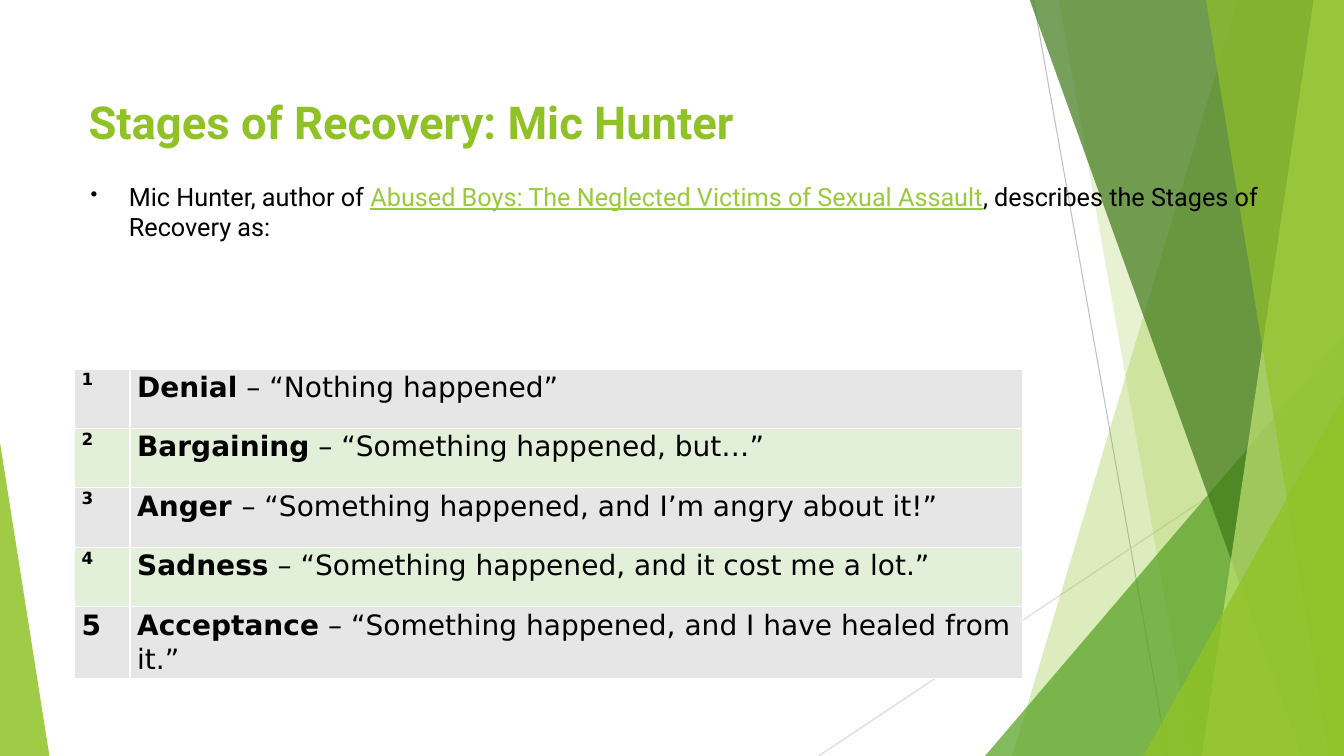
from lxml import etree
from pptx import Presentation
from pptx.dml.color import RGBColor
from pptx.enum import shapes, text
from pptx.oxml import ns
from pptx.util import Inches, Pt

COLORS = {
    "lime": "90C226", "green": "54A021", "forest": "3F7819", "pale": "C0E474",
    "link": "99CA3C", "black": "000000", "line": "BFBFBF", "light_line": "D9D9D9",
    "gray_row": "E7E6E6", "green_row": "E2EFD9",
}
WIDTH, HEIGHT = 13.33, 7.5
TOP = -0.01

STAGES = [
    ("Denial", " – “Nothing happened”"),
    ("Bargaining", " – “Something happened, but…”"),
    ("Anger ", "– “Something happened, and I’m angry about it!”"),
    ("Sadness", " – “Something happened, and it cost me a lot.”"),
    ("Acceptance", " – “Something happened, and I have healed from it.”"),
]


def color(name):
    return RGBColor.from_string(COLORS[name])


def paint(shape, fill, opacity):
    shape.shadow.inherit = False
    shape.line.fill.background()
    shape.fill.solid()
    shape.fill.fore_color.rgb = color(fill)
    value = shape.fill._xPr.find(".//" + ns.qn("a:srgbClr"))
    etree.SubElement(value, ns.qn("a:alpha"), val=str(opacity * 1000))


def add_line(page, start, end, stroke):
    line = page.shapes.add_connector(
        shapes.MSO_CONNECTOR.STRAIGHT, *map(Inches, start + end))
    line.line.color.rgb = color(stroke)
    line.line.width = Pt(0.75)
    etree.SubElement(line._element.spPr, ns.qn("a:effectLst"))


def add_band(page, top_x, bottom_x, fill, opacity):
    """A slanted left edge, filled out to the right edge of the slide."""
    corners = [(top_x, TOP), (WIDTH, TOP), (WIDTH, HEIGHT), (bottom_x, HEIGHT)]
    points = [(Inches(x), Inches(y)) for x, y in corners]
    builder = page.shapes.build_freeform(*points[0])
    builder.add_line_segments(points[1:], close=True)
    paint(builder.convert_to_shape(), fill, opacity)


def add_triangle(page, left, top, width, apex, fill, opacity):
    triangle = page.shapes.add_shape(
        shapes.MSO_SHAPE.ISOSCELES_TRIANGLE,
        *map(Inches, (left, top, width, HEIGHT - top)))
    triangle.adjustments[0] = apex
    paint(triangle, fill, opacity)


def add_text_box(page, left, top, width, height, anchor):
    box = page.shapes.add_textbox(*map(Inches, (left, top, width, height)))
    box.text_frame.word_wrap = True
    box.text_frame.vertical_anchor = anchor
    return box.text_frame.paragraphs[0]


def set_font(font, name, size, shade, bold=False):
    font.name = name
    font.size = Pt(size)
    font.bold = bold
    font.color.rgb = color(shade)


def add_span(para, words):
    span = para.add_run()
    span.text = words
    return span


def add_bullet(para, indent):
    properties = para._p.get_or_add_pPr()
    properties.set("marL", str(Inches(indent)))
    properties.set("indent", str(-Inches(indent)))
    size = etree.Element(ns.qn("a:buSzPct"), val="80000")
    mark = etree.Element(ns.qn("a:buChar"), char="•")
    properties.insert(0, size)
    properties.insert(1, mark)


def style_cell(cell, fill, size):
    cell.fill.solid()
    cell.fill.fore_color.rgb = color(fill)
    cell.margin_left = cell.margin_right = Inches(0.07)
    cell.margin_top = cell.margin_bottom = 0
    para = cell.text_frame.paragraphs[0]
    para.line_spacing = 1.07
    set_font(para.font, "DejaVu Sans", size, "black", bold=True)
    return para


def add_stages(page):
    frame = page.shapes.add_table(
        len(STAGES), 2, *map(Inches, (0.74, 3.66, 9.4, 3.07)))
    table = frame.table
    table.columns[0].width = Inches(0.55)
    table.columns[1].width = Inches(8.85)
    for index, (stage, quote) in enumerate(STAGES):
        last = index == len(STAGES) - 1
        table.rows[index].height = Inches(0.7 if last else 0.59)
        fill = "green_row" if index % 2 else "gray_row"
        number = style_cell(table.cell(index, 0), fill, 20 if last else 12)
        add_span(number, str(index + 1))
        para = style_cell(table.cell(index, 1), fill, 20)
        add_span(para, stage)
        add_span(para, quote).font.bold = False


def add_backdrop(page):
    add_line(page, (10.25, 0), (11.58, HEIGHT), "line")
    add_line(page, (WIDTH, 4.03), (8.12, HEIGHT), "light_line")
    add_band(page, 12.28, 10.04, "lime", 30)
    add_band(page, 10.5, 11.83, "lime", 20)
    add_triangle(page, 9.77, 3.33, 3.56, 1, "green", 72)
    add_band(page, 10.21, 12.91, "forest", 70)
    add_band(page, 13.03, 11.92, "pale", 70)
    add_band(page, 11.96, 13.18, "lime", 65)
    add_triangle(page, 11.34, 3.93, 1.99, 1, "lime", 80)
    add_triangle(page, 0, 4.39, 0.49, 0, "lime", 85)


def main():
    deck = Presentation()
    deck.slide_width, deck.slide_height = Inches(WIDTH), Inches(HEIGHT)
    page = deck.slides.add_slide(deck.slide_layouts[6])
    add_backdrop(page)

    # Title
    title = add_text_box(page, 0.78, 0.85, 11.73, 0.7, text.MSO_ANCHOR.MIDDLE)
    set_font(title.font, "Roboto", 32.4, "lime", bold=True)
    add_span(title, "Stages of Recovery: Mic Hunter")

    # Introduction
    intro = add_text_box(page, 0.8, 1.75, 12.05, 4.75, text.MSO_ANCHOR.TOP)
    set_font(intro.font, "Roboto", 18, "black")
    add_bullet(intro, 0.38)
    add_span(intro, "Mic Hunter, author of ")
    book = add_span(intro, "Abused Boys: The Neglected Victims of Sexual Assault")
    book.font.color.rgb = color("link")
    book.font.underline = True
    add_span(intro, ", describes the Stages of Recovery as:")

    # Stages
    add_stages(page)
    deck.save("out.pptx")


if __name__ == "__main__":
    main()
